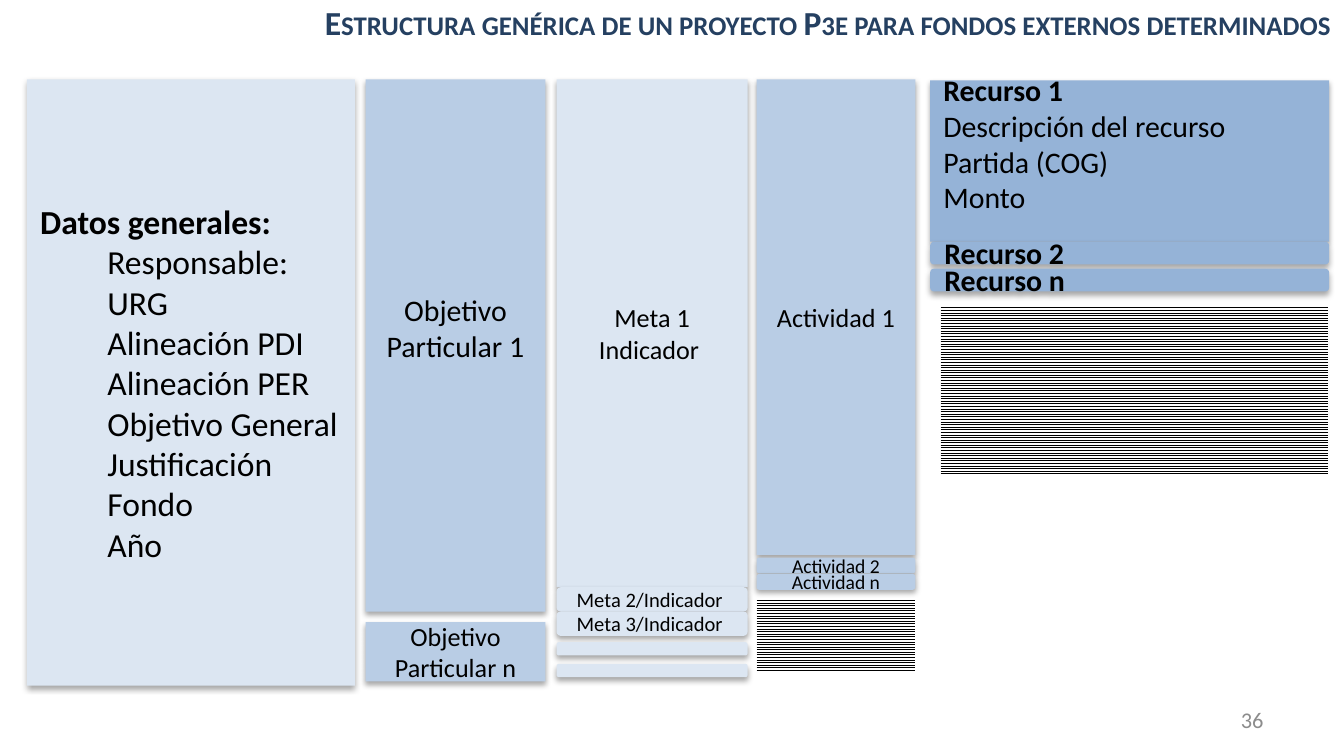
from lxml.etree import SubElement
from pptx import Presentation
from pptx.dml.color import RGBColor
from pptx.enum.dml import MSO_PATTERN
from pptx.enum.shapes import MSO_SHAPE
from pptx.enum.text import MSO_ANCHOR, MSO_AUTO_SIZE, PP_ALIGN
from pptx.oxml.ns import qn
from pptx.util import Cm, Pt

PALE = RGBColor(0xDC, 0xE6, 0xF2)
LIGHT = RGBColor(0xB9, 0xCD, 0xE5)
MEDIUM = RGBColor(0x95, 0xB3, 0xD7)
NAVY = RGBColor(0x25, 0x40, 0x61)
GRAY = RGBColor(0x8C, 0x8C, 0x8C)
BLACK = RGBColor(0, 0, 0)
WHITE = RGBColor(255, 255, 255)

TOP = 1.5
# Left edge and width of each column, in cm
GENERAL = (0.51, 6.2)
OBJECTIVE = (6.91, 3.4)
GOAL = (10.52, 3.61)
ACTIVITY = (14.3, 3)
RESOURCE = (17.58, 7.54)


def add_shadow(s):
    s.shadow.inherit = False
    effects = s._element.spPr.find(qn("a:effectLst"))
    shadow = SubElement(effects, qn("a:outerShdw"), blurRad=str(Pt(3.1)),
                        dist=str(Pt(1.8)), dir="5400000", rotWithShape="0")
    color = SubElement(shadow, qn("a:srgbClr"), val="000000")
    SubElement(color, qn("a:alpha"), val="35000")


def add_line(p, text, align=PP_ALIGN.LEFT, **font):
    p.alignment = align
    r = p.add_run()
    r.text = text
    values = {"name": "Calibri", "size": Pt(18), "bold": False} | font
    r.font.color.rgb = values.pop("color", BLACK)
    for name, value in values.items():
        setattr(r.font, name, value)
    return r


def add_block(slide, column, top, height, color, lines=(), size=18,
              align=PP_ALIGN.CENTER, heading=False, indent=0, rounded=False,
              bottom=0.13):
    """Add a shadowed block; heading makes its first line bold, indent moves the others."""
    left, width = column
    s = slide.shapes.add_shape(MSO_SHAPE.ROUNDED_RECTANGLE, Cm(left), Cm(top),
                               Cm(width), Cm(height))
    if not rounded:
        s.adjustments[0] = 0
    s.fill.solid()
    s.fill.fore_color.rgb = color
    s.line.fill.background()
    add_shadow(s)
    tf = s.text_frame
    tf.word_wrap = True
    tf.vertical_anchor = MSO_ANCHOR.MIDDLE
    tf.margin_bottom = Cm(bottom)
    for i, text in enumerate(lines):
        p = tf.paragraphs[0] if i == 0 else tf.add_paragraph()
        if i and indent:
            p.level = 1
            p._p.get_or_add_pPr().set("marL", str(Cm(indent)))
            p._p.get_or_add_pPr().set("indent", "0")
        add_line(p, text, align, size=Pt(size), bold=heading and i == 0)


def add_striped_area(slide, left, top, width, height):
    s = slide.shapes.add_shape(MSO_SHAPE.RECTANGLE, Cm(left), Cm(top),
                               Cm(width), Cm(height))
    s.shadow.inherit = False
    s.fill.patterned()
    s.fill.pattern = MSO_PATTERN.LIGHT_HORIZONTAL
    s.fill.fore_color.rgb = BLACK
    s.fill.back_color.rgb = WHITE
    s.line.fill.background()


def add_label(slide, left, top, width, height, text, **font):
    """Add a right-aligned text box and return its text frame and run."""
    tf = slide.shapes.add_textbox(Cm(left), Cm(top), Cm(width), Cm(height)).text_frame
    tf.word_wrap = True
    return tf, add_line(tf.paragraphs[0], text, PP_ALIGN.RIGHT, **font)


def add_title(slide):
    tf, r = add_label(
        slide, 0.89, 0, 24.51, 0.94,
        "Estructura genérica de un proyecto P3e para fondos externos determinados",
        bold=True, color=NAVY)
    tf.auto_size = MSO_AUTO_SIZE.SHAPE_TO_FIT_TEXT
    tf.paragraphs[0].line_spacing = 0.9
    r.font._element.set("cap", "small")


def add_page_number(slide):
    tf, _ = add_label(slide, 18.21, 13.23, 5.92, 0.76, "36", size=Pt(12), color=GRAY)
    tf.vertical_anchor = MSO_ANCHOR.MIDDLE


def main():
    prs = Presentation()
    prs.slide_width, prs.slide_height = Cm(25.4), Cm(14.29)
    slide = prs.slides.add_slide(prs.slide_layouts[6])

    add_block(slide, GENERAL, TOP, 11.46, PALE,
              ["Datos generales:", "Responsable:", "URG", "Alineación PDI",
               "Alineación PER", "Objetivo General", "Justificación", "Fondo", "Año"],
              align=PP_ALIGN.LEFT, heading=True, indent=1.27)

    add_block(slide, OBJECTIVE, TOP, 10.06, LIGHT, ["Objetivo Particular 1"], 16,
              bottom=0.8)
    add_block(slide, OBJECTIVE, 11.76, 1.12, LIGHT, ["Objetivo Particular n"], 14)

    add_block(slide, GOAL, TOP, 9.6, PALE, ["Meta 1 Indicador "], 14)
    for top, number in ((11.1, 2), (11.56, 3)):
        add_block(slide, GOAL, top, 0.46, PALE, [f"Meta {number}/Indicador "], 11,
                  rounded=True)
    for top in (12.14, 12.55):
        add_block(slide, GOAL, top, 0.25, PALE, rounded=True)

    add_block(slide, ACTIVITY, TOP, 8.99, LIGHT, ["Actividad 1"], 14)
    for top, number in ((10.54, "2"), (10.85, "n")):
        add_block(slide, ACTIVITY, top, 0.3, LIGHT, [f"Actividad {number}"], 10.5,
                  rounded=True)
    add_striped_area(slide, ACTIVITY[0], 11.3, ACTIVITY[1], 1.37)

    add_block(slide, RESOURCE, 1.52, 3.05, MEDIUM,
              ["Recurso 1", "Descripción del recurso", "Partida (COG)", "Monto"], 16,
              PP_ALIGN.LEFT, heading=True, bottom=0.8)
    for top, number in ((4.57, "2"), (5.08, "n")):
        add_block(slide, RESOURCE, top, 0.43, MEDIUM, [f"Recurso {number}"], 16,
                  PP_ALIGN.LEFT, heading=True, rounded=True)
    add_striped_area(slide, 17.78, 5.77, 7.32, 3.23)

    add_title(slide)
    add_page_number(slide)
    prs.save("out.pptx")


if __name__ == "__main__":
    main()
